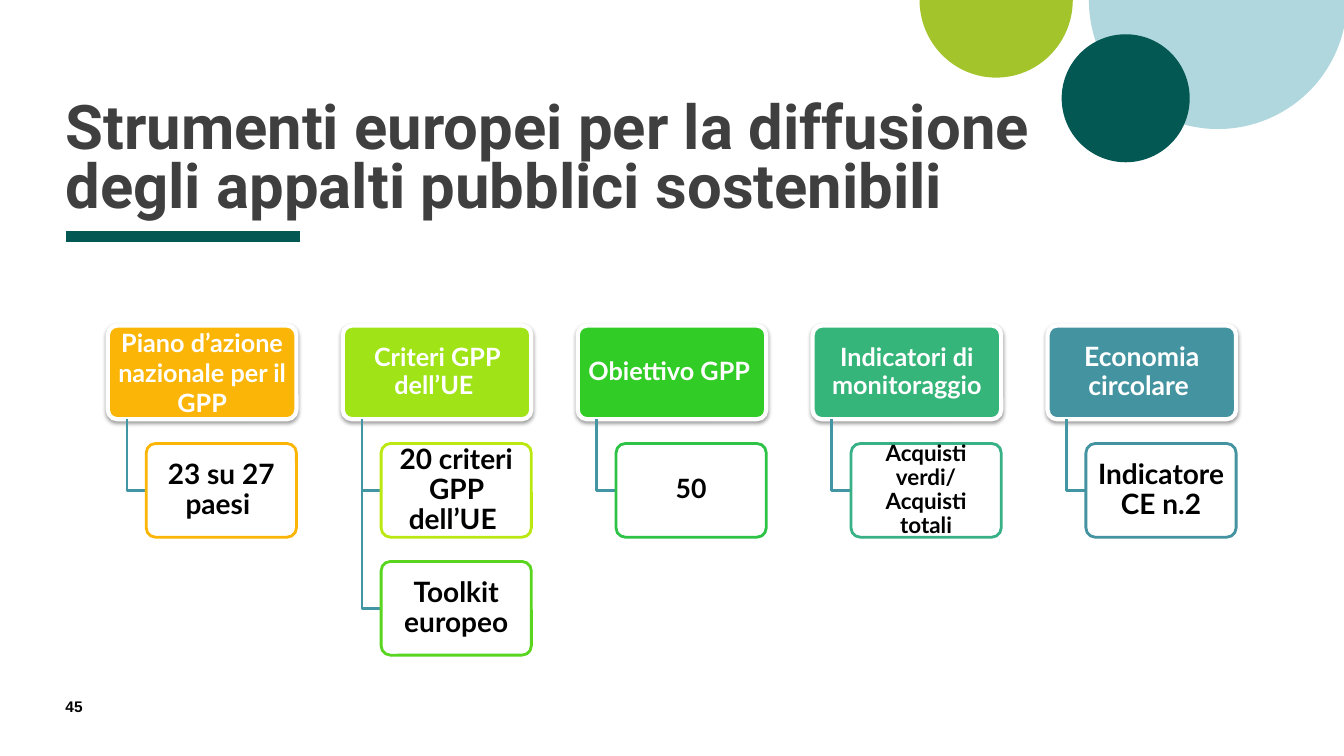
from lxml import etree
from pptx import Presentation
from pptx.dml.color import RGBColor
from pptx.enum.shapes import MSO_CONNECTOR, MSO_SHAPE
from pptx.enum.text import MSO_ANCHOR, PP_ALIGN
from pptx.oxml.ns import qn
from pptx.util import Inches, Pt

ROUNDED = MSO_SHAPE.ROUNDED_RECTANGLE
PIE = MSO_SHAPE.PIE
OVAL = MSO_SHAPE.OVAL
STRAIGHT = MSO_CONNECTOR.STRAIGHT
TOP, MIDDLE, BOTTOM = MSO_ANCHOR.TOP, MSO_ANCHOR.MIDDLE, MSO_ANCHOR.BOTTOM
LEFT, CENTER = PP_ALIGN.LEFT, PP_ALIGN.CENTER

WHITE = RGBColor(0xFF, 0xFF, 0xFF)
BLACK = RGBColor(0x00, 0x00, 0x00)
CHARCOAL = RGBColor(0x3F, 0x3F, 0x3F)
DARK_TEAL = RGBColor(0x03, 0x58, 0x54)
PALE_BLUE = RGBColor(0xAF, 0xD7, 0xDD)
OLIVE = RGBColor(0xA3, 0xC4, 0x2A)
BRANCH_BLUE = RGBColor(0x42, 0x95, 0xA2)
AMBER = RGBColor(0xFA, 0xB5, 0x06)
LIME = RGBColor(0xA0, 0xE3, 0x16)
YELLOW_LIME = RGBColor(0xBC, 0xE8, 0x12)
LEAF = RGBColor(0x59, 0xD5, 0x20)
GREEN = RGBColor(0x32, 0xCC, 0x26)
EMERALD = RGBColor(0x2C, 0xC3, 0x46)
SEA = RGBColor(0x35, 0xB5, 0x79)
JADE = RGBColor(0x38, 0xB1, 0x87)
STEEL = RGBColor(0x43, 0x93, 0xA0)

COLUMN_LEFT, COLUMN_STEP = 1.07, 2.33
HEADING_TOP, HEADING_WIDTH = 3.23, 1.87
BOX_HEIGHT, ROW_STEP = 0.93, 1.17
DETAIL_INDENT, DETAIL_WIDTH = 0.38, 1.49
TRUNK_INDENT = 0.19

TOOLS = [
    ("Piano d’azione nazionale per il GPP", 18, 1.0, AMBER,
     [(["23 su 27 paesi "], 20, AMBER)]),
    ("Criteri GPP dell’UE ", 18, 0.9, LIME,
     [(["20 criteri GPP dell’UE "], 20, YELLOW_LIME),
      (["Toolkit europeo"], 20, LEAF)]),
    ("Obiettivo GPP ", 18, 0.9, GREEN, [(["50"], 19, EMERALD)]),
    ("Indicatori di monitoraggio", 18, 0.9, SEA,
     [(["Acquisti verdi/", "Acquisti totali"], 16, JADE)]),
    ("Economia circolare ", 19, 0.9, STEEL,
     [(["Indicatore CE n.2"], 20, STEEL)]),
]


class SlideBuilder:
    font = "Lato"

    def __init__(self, slide):
        self.slide = slide
        self.shapes = slide.shapes

    def set_text(self, frame, lines, size, color, font, align, anchor, spacing, inset=(0, 0)):
        frame.word_wrap = True
        frame.vertical_anchor = anchor
        frame.margin_left = frame.margin_right = Inches(inset[0])
        frame.margin_top = frame.margin_bottom = Inches(inset[1])
        for index, line in enumerate(lines):
            paragraph = frame.paragraphs[0] if index == 0 else frame.add_paragraph()
            paragraph.alignment = align
            paragraph.line_spacing = spacing
            run = paragraph.add_run()
            run.text = line
            run.font.name = font
            run.font.size = Pt(size)
            run.font.bold = True
            run.font.color.rgb = color

    def label(self, bounds, line, size, color, font, anchor, spacing):
        box = self.shapes.add_textbox(*map(Inches, bounds))
        self.set_text(box.text_frame, [line], size, color, font, LEFT, anchor, spacing)

    def shape(self, kind, bounds, fill, outline=None, weight=0):
        shape = self.shapes.add_shape(kind, *map(Inches, bounds))
        shape.shadow.inherit = False
        shape.fill.solid()
        shape.fill.fore_color.rgb = fill
        if outline is None:
            shape.line.fill.background()
        else:
            shape.line.color.rgb = outline
            shape.line.width = Pt(weight)
        return shape

    def half_disc(self, bounds, fill):
        disc = self.shape(PIE, bounds, fill)
        disc.adjustments[0] = 0
        disc.adjustments[1] = 108

    def card(self, bounds, fill, outline, weight, lines, size, color, spacing):
        card = self.shape(ROUNDED, bounds, fill, outline, weight)
        card.adjustments[0] = 0.1
        self.set_text(card.text_frame, lines, size, color, self.font,
                      CENTER, MIDDLE, spacing, (0.04, 0.03))
        return card

    def heading(self, left, line, size, spacing, fill):
        bounds = (left, HEADING_TOP, HEADING_WIDTH, BOX_HEIGHT)
        card = self.card(bounds, fill, WHITE, 3, [line], size, WHITE, spacing)
        effects = card.element.spPr.find(qn("a:effectLst"))
        shadow = etree.SubElement(effects, qn("a:outerShdw"), blurRad=str(Pt(3.1)),
                                  dist=str(Pt(1.6)), dir="5400000", rotWithShape="0")
        tint = etree.SubElement(shadow, qn("a:srgbClr"), val=str(BLACK))
        etree.SubElement(tint, qn("a:alpha"), val="38000")

    def detail(self, left, top, lines, size, outline):
        bounds = (left, top, DETAIL_WIDTH, BOX_HEIGHT)
        card = self.card(bounds, WHITE, outline, 2, lines, size, BLACK, 0.9)
        tint = card.element.spPr.find(qn("a:solidFill"))[0]
        etree.SubElement(tint, qn("a:alpha"), val="90000")

    def branch(self, left, top, right, bottom):
        x1, y1, x2, y2 = map(Inches, (left, top, right, bottom))
        builder = self.shapes.build_freeform(x1, y1)
        builder.add_line_segments([(x1, y2), (x2, y2)], close=False)
        elbow = builder.convert_to_shape()
        elbow.shadow.inherit = False
        elbow.fill.background()
        elbow.line.color.rgb = BRANCH_BLUE
        elbow.line.width = Pt(2)

    def rule(self, start, end, color, weight):
        line = self.shapes.add_connector(STRAIGHT, *map(Inches, start + end))
        line.line.color.rgb = color
        line.line.width = Pt(weight)
        etree.SubElement(line.element.spPr, qn("a:effectLst"))

    def tool_column(self, left, heading, size, spacing, fill, details):
        self.heading(left, heading, size, spacing, fill)
        detail_left = left + DETAIL_INDENT
        for row, (lines, detail_size, outline) in enumerate(details, 1):
            top = HEADING_TOP + row * ROW_STEP
            self.branch(left + TRUNK_INDENT, HEADING_TOP + BOX_HEIGHT,
                        detail_left, top + BOX_HEIGHT / 2)
            self.detail(detail_left, top, lines, detail_size, outline)


def main():
    deck = Presentation()
    deck.slide_width, deck.slide_height = Inches(13.33), Inches(7.5)
    page = SlideBuilder(deck.slides.add_slide(deck.slide_layouts[6]))

    page.rule((0.65, 2.35), (2.98, 2.35), DARK_TEAL, 8)
    page.half_disc((10.8, -1.28, 2.56, 2.56), PALE_BLUE)
    page.half_disc((9.12, -0.77, 1.52, 1.54), OLIVE)
    page.shape(OVAL, (10.53, 0.34, 1.27, 1.27), DARK_TEAL)
    page.label((0.65, 0.56, 9.93, 1.63),
               "Strumenti europei per la diffusione degli appalti pubblici sostenibili",
               44, CHARCOAL, "Roboto", BOTTOM, 0.8)
    page.label((0.65, 6.92, 0.57, 0.27), "45", 11, BLACK, "Arial", TOP, 1.0)

    for column, tool in enumerate(TOOLS):
        page.tool_column(COLUMN_LEFT + column * COLUMN_STEP, *tool)

    deck.save("out.pptx")


if __name__ == "__main__":
    main()
